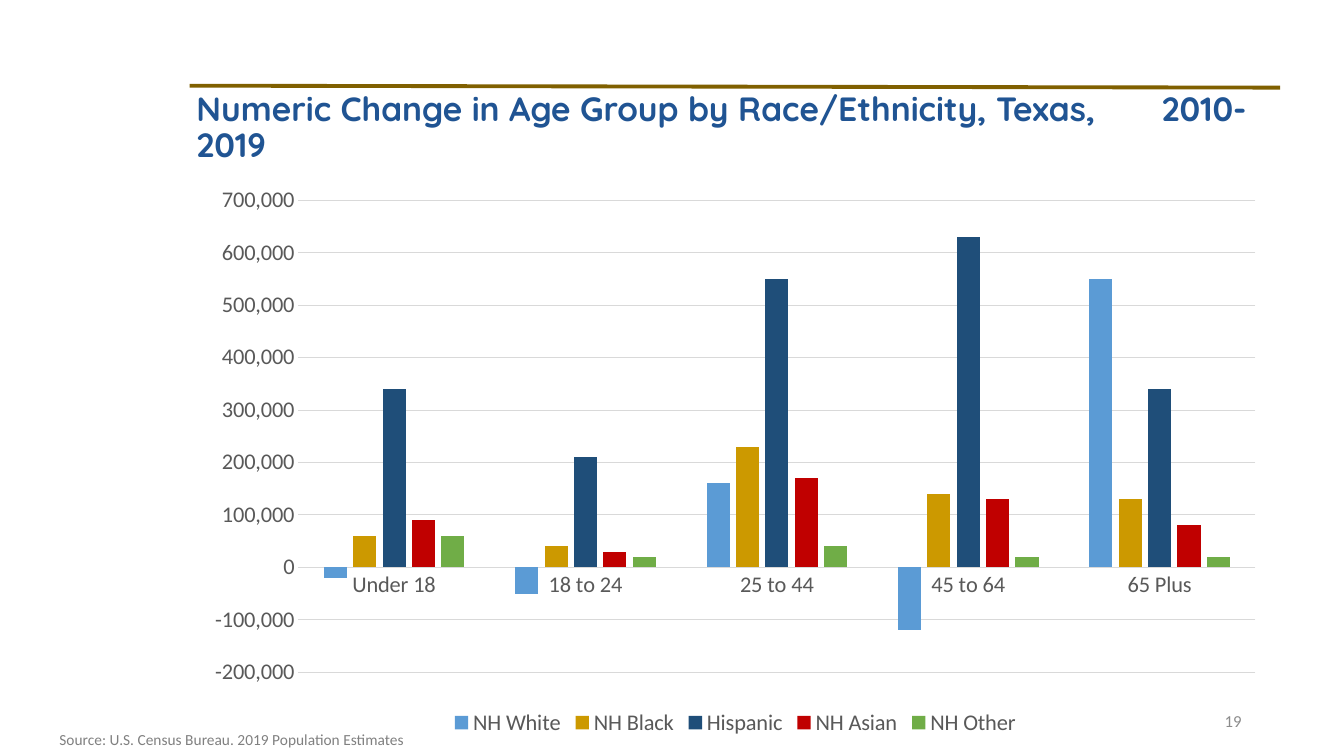
import pptx
import pptx.chart.data
import pptx.dml.color
import pptx.enum.chart
import pptx.enum.shapes
import pptx.enum.text
import pptx.oxml
import pptx.oxml.ns
import pptx.util
from lxml import etree

Pt = pptx.util.Pt
RGBColor = pptx.dml.color.RGBColor
Align = pptx.enum.text.PP_ALIGN
Anchor = pptx.enum.text.MSO_ANCHOR

BRONZE = RGBColor(0x80, 0x60, 0x00)
TITLE_BLUE = RGBColor(0x20, 0x54, 0x93)
PAGE_GRAY = RGBColor(0x8C, 0x8C, 0x8C)
SOURCE_GRAY = RGBColor(0x80, 0x80, 0x80)
AXIS_GRAY = RGBColor(0x59, 0x59, 0x59)
GRID_GRAY = RGBColor(0xD9, 0xD9, 0xD9)
SKY = RGBColor(0x5B, 0x9B, 0xD5)
GOLD = RGBColor(0xCC, 0x99, 0x00)
NAVY = RGBColor(0x1F, 0x4E, 0x79)
RED = RGBColor(0xC0, 0x00, 0x00)
GREEN = RGBColor(0x70, 0xAD, 0x47)

AGE_GROUPS = ["Under 18", "18 to 24", "25 to 44", "45 to 64", "65 Plus"]
CHANGES = [
    ("NH White", SKY, [-20000, -50000, 160000, -120000, 550000]),
    ("NH Black", GOLD, [60000, 40000, 230000, 140000, 130000]),
    ("Hispanic", NAVY, [340000, 210000, 550000, 630000, 340000]),
    ("NH Asian", RED, [90000, 30000, 170000, 130000, 80000]),
    ("NH Other", GREEN, [60000, 20000, 40000, 20000, 20000]),
]


class SlideBuilder:
    body_font = "Calibri"
    title_font = "Quicksand"
    chart_size = 16

    def __init__(self, slide):
        self.slide = slide

    def style(self, font, size, color, name=None, bold=False):
        font.size = Pt(size)
        font.name = name or self.body_font
        font.bold = bold
        font.color.rgb = color

    def rule(self, x1, y1, x2, y2, color, width):
        line = self.slide.shapes.add_connector(
            pptx.enum.shapes.MSO_CONNECTOR.STRAIGHT, Pt(x1), Pt(y1), Pt(x2), Pt(y2))
        line.line.color.rgb = color
        line.line.width = Pt(width)
        etree.SubElement(line._element.spPr, pptx.oxml.ns.qn("a:effectLst"))

    def text(self, box, words, size, color, name=None, bold=False,
             align=Align.LEFT, anchor=Anchor.TOP, spacing=None, tab=None):
        frame = self.slide.shapes.add_textbox(*map(Pt, box)).text_frame
        frame.word_wrap = True
        frame.vertical_anchor = anchor
        paragraph = frame.paragraphs[0]
        if tab:
            properties = paragraph._p.get_or_add_pPr()
            stops = etree.SubElement(properties, pptx.oxml.ns.qn("a:tabLst"))
            etree.SubElement(stops, pptx.oxml.ns.qn("a:tab"), pos=str(Pt(tab)), algn="l")
        paragraph.alignment = align
        if spacing:
            paragraph.line_spacing = spacing
        run = paragraph.add_run()
        run.text = words
        self.style(run.font, size, color, name, bold)

    def columns(self, box, categories, groups):
        data = pptx.chart.data.CategoryChartData(number_format="#,##0")
        data.categories = categories
        for name, _, values in groups:
            data.add_series(name, values)
        chart = self.slide.shapes.add_chart(
            pptx.enum.chart.XL_CHART_TYPE.COLUMN_CLUSTERED, *map(Pt, box), data).chart
        self.style(chart.font, self.chart_size, AXIS_GRAY)
        chart.has_title = False

        # Columns
        plot = chart.plots[0]
        plot.vary_by_categories = False
        plot.gap_width = 219
        plot.overlap = -27
        for series, (_, color, _) in zip(plot.series, groups):
            series.invert_if_negative = False
            series.format.fill.solid()
            series.format.fill.fore_color.rgb = color

        # Axes
        ages, counts = chart.category_axis, chart.value_axis
        for axis in (ages, counts):
            axis.major_tick_mark = pptx.enum.chart.XL_TICK_MARK.NONE
            axis.minor_tick_mark = pptx.enum.chart.XL_TICK_MARK.NONE
            self.style(axis.tick_labels.font, self.chart_size, AXIS_GRAY)
        counts.minimum_scale = -200000
        counts.maximum_scale = 700000
        counts.major_unit = 100000
        counts.tick_labels.number_format = "#,##0"
        counts.tick_labels.number_format_is_linked = False
        counts.format.line.fill.background()
        counts.has_major_gridlines = True
        for line in (ages.format.line, counts.major_gridlines.format.line):
            line.color.rgb = GRID_GRAY
            line.width = Pt(0.75)

        # Legend
        chart.has_legend = True
        chart.legend.position = pptx.enum.chart.XL_LEGEND_POSITION.BOTTOM
        chart.legend.include_in_layout = False
        self.style(chart.legend.font, self.chart_size, AXIS_GRAY)


def main():
    deck = pptx.Presentation()
    deck.slide_width, deck.slide_height = Pt(960), Pt(540)
    page = SlideBuilder(deck.slides.add_slide(deck.slide_layouts[6]))

    # Rule and page number
    page.rule(135.4, 61.2, 914.4, 62.6, BRONZE, 2.75)
    page.text((678, 500.4, 216, 28.8), "19", 12, PAGE_GRAY,
              align=Align.RIGHT, anchor=Anchor.MIDDLE)

    # Population change by age group
    page.columns((138.2, 125.3, 774, 403.9), AGE_GROUPS, CHANGES)

    # Title and source
    page.text((133.2, 62.6, 779, 60),
              "Numeric Change in Age Group by Race/Ethnicity, Texas,\t2010-2019",
              24, TITLE_BLUE, page.title_font, bold=True, spacing=0.9, tab=689.5)
    page.text((35.3, 517.7, 630, 20.9),
              "Source: U.S. Census Bureau. 2019 Population Estimates", 11, SOURCE_GRAY)

    deck.save("out.pptx")


if __name__ == "__main__":
    main()
